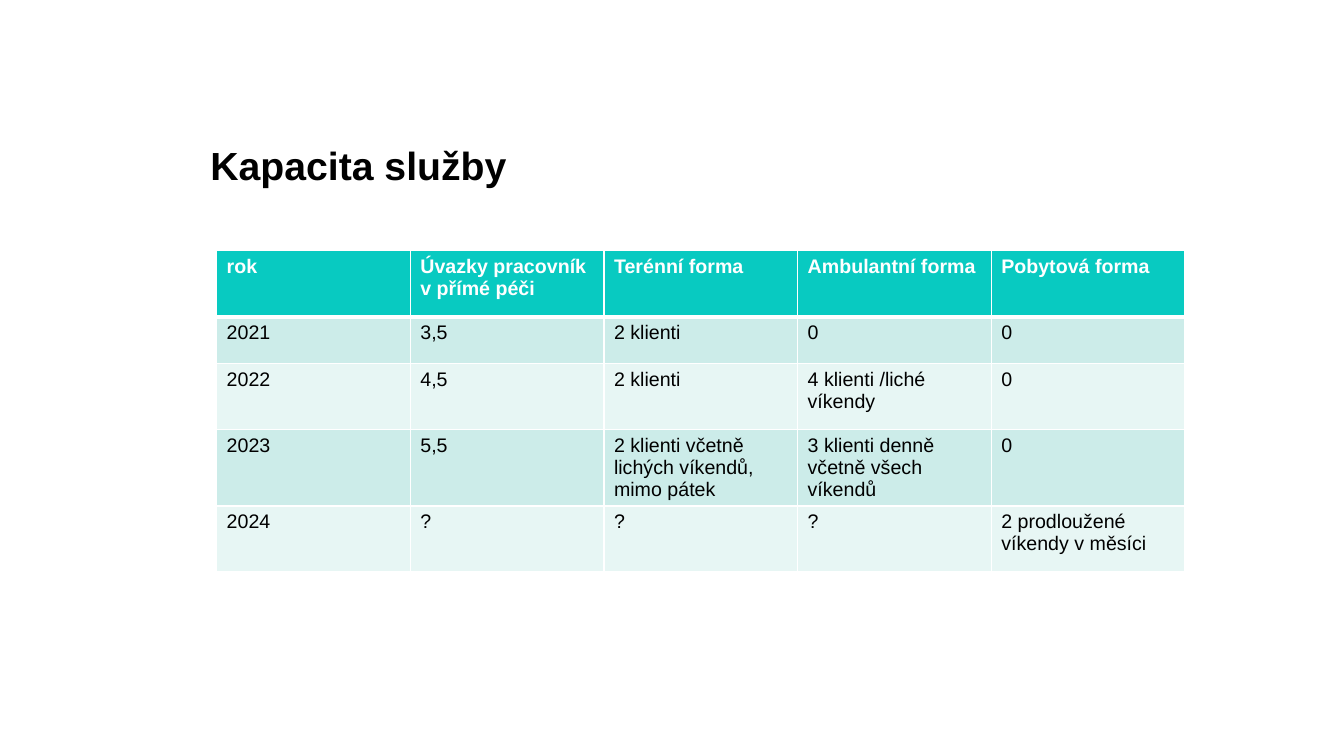
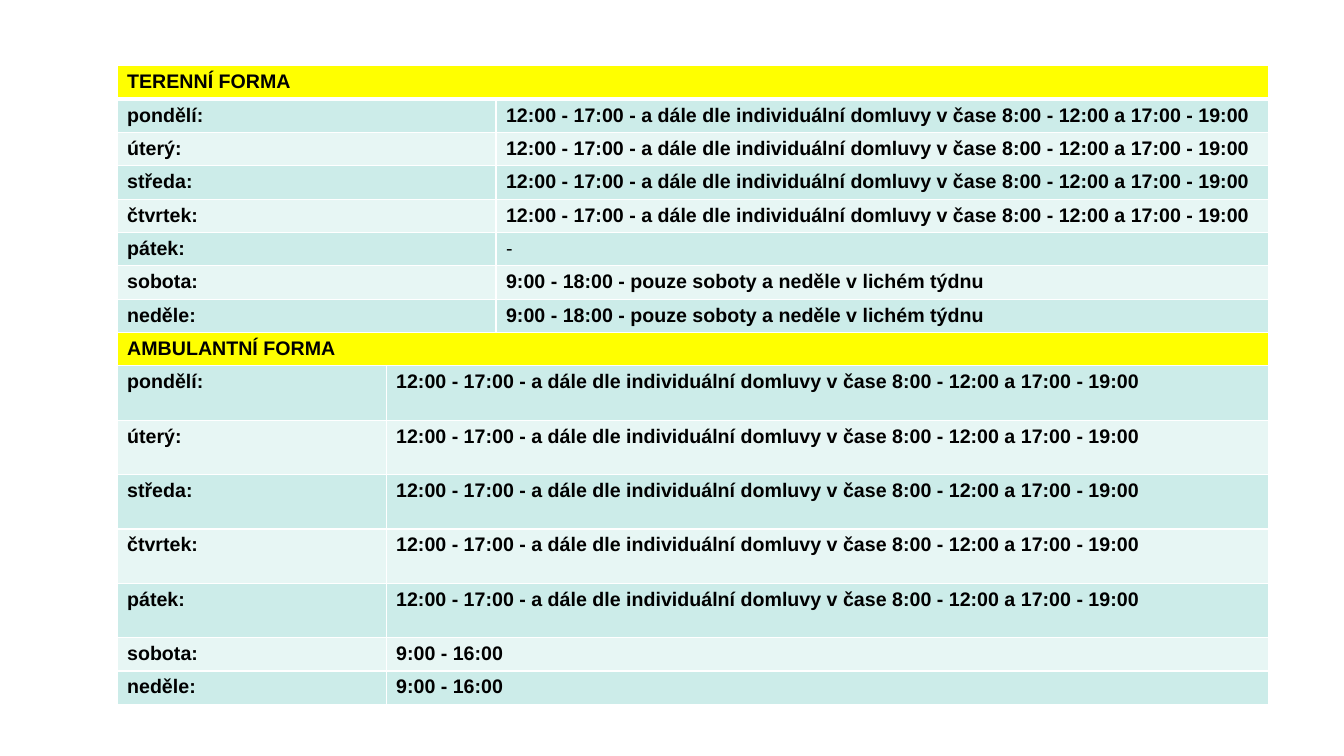
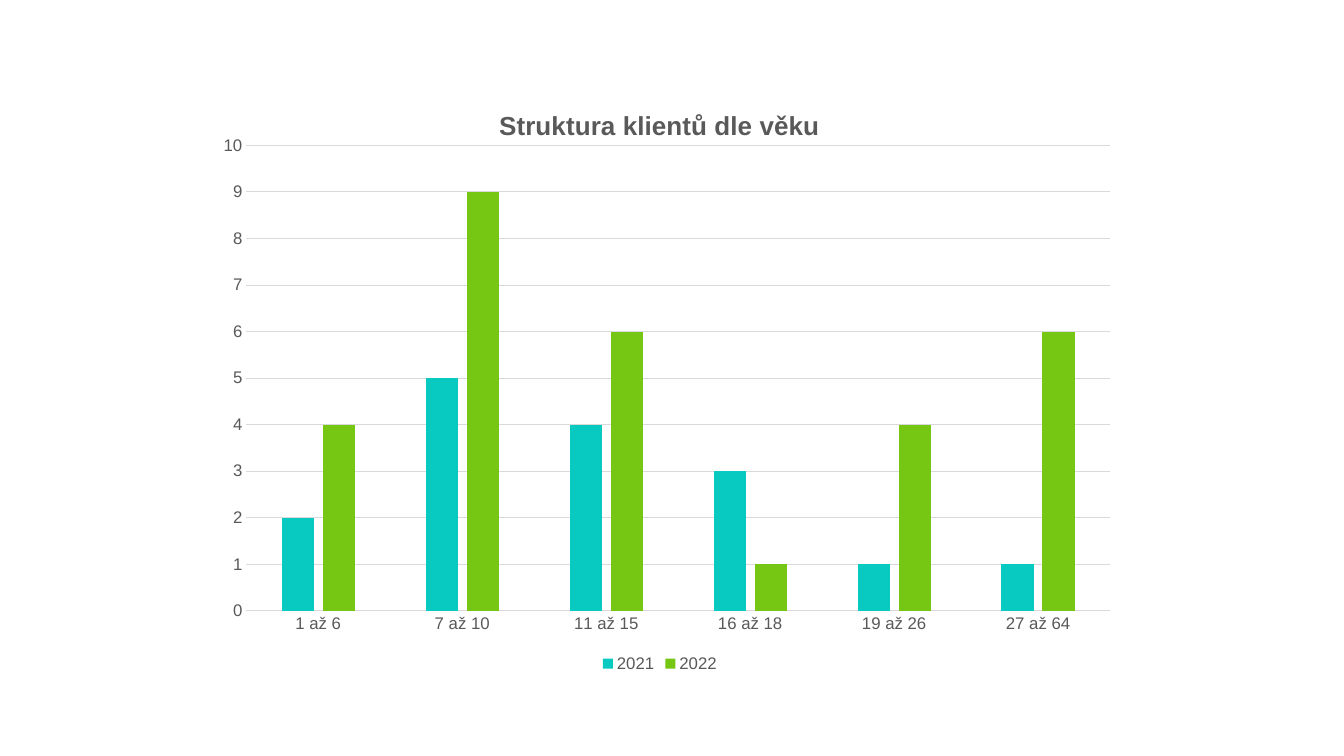
from lxml.etree import SubElement
from pptx import Presentation
from pptx.chart.data import CategoryChartData
from pptx.dml.color import RGBColor
from pptx.enum.chart import XL_CHART_TYPE, XL_LEGEND_POSITION, XL_TICK_MARK
from pptx.enum.text import MSO_ANCHOR, MSO_AUTO_SIZE, PP_ALIGN
from pptx.oxml import parse_xml
from pptx.oxml.ns import nsdecls, qn
from pptx.util import Cm, Pt

FONT = "Arial"
WHITE, BLACK, GREY, GRID = "FFFFFF", "000000", "595959", "D9D9D9"
TEAL, GREEN, YELLOW = "08CAC1", "76C714", "FFFF00"
BANDS = ["E7F6F4", "CCECE9"]


def set_font(font, color, **values):
    for name, value in {"name": FONT, **values}.items():
        setattr(font, name, value)
    font.color.rgb = RGBColor.from_string(color)


def set_layout(element, position, **values):
    layout = element.find(qn("c:layout"))
    if layout is None:
        layout = parse_xml(f"<c:layout {nsdecls('c')}/>")
        element.insert(position, layout)
    manual = SubElement(layout, qn("c:manualLayout"))
    for name, value in values.items():
        SubElement(manual, qn(f"c:{name}")).set("val", str(value))


deck = Presentation()
deck.slide_width, deck.slide_height = Cm(33.87), Cm(19.05)
title_layout, blank_layout = deck.slide_layouts[5], deck.slide_layouts[6]

capacity_slide = deck.slides.add_slide(title_layout)
title = capacity_slide.shapes.title
title.left, title.top, title.width, title.height = Cm(5.05), Cm(3.56), Cm(20.9), Cm(2.18)
frame = title.text_frame
frame.text = "Kapacita služby"
for name, value in {
    "word_wrap": True,
    "auto_size": MSO_AUTO_SIZE.NONE,
    "vertical_anchor": MSO_ANCHOR.TOP,
}.items():
    setattr(frame, name, value)
para = frame.paragraphs[0]
para.alignment, para.line_spacing = PP_ALIGN.JUSTIFY, 0.9
set_font(para.font, BLACK, size=Pt(28), bold=True)

hours_slide = deck.slides.add_slide(blank_layout)

capacity = [
    ["rok", "Úvazky pracovník v přímé péči", "Terénní forma", "Ambulantní forma", "Pobytová forma"],
    ["2021", "3,5", "2 klienti", "0", "0"],
    ["2022", "4,5", "2 klienti", "4 klienti /liché víkendy", "0"],
    ["2023", "5,5", "2 klienti včetně lichých víkendů, mimo pátek", "3 klienti denně včetně všech víkendů", "0"],
    ["2024", "?", "?", "?", "2 prodloužené víkendy v měsíci"],
]
days = ["pondělí:", "úterý:", "středa:", "čtvrtek:", "pátek:", "sobota:", "neděle:"]
weekday = "12:00 - 17:00 - a dále dle individuální domluvy v čase 8:00 - 12:00 a 17:00 - 19:00"
odd_weekend = "9:00 - 18:00 - pouze soboty a neděle v lichém týdnu"
field_hours = [weekday] * 4 + ["-"] + [odd_weekend] * 2
clinic_hours = [weekday] * 5 + ["9:00 - 16:00"] * 2
hours = [["TERENNÍ FORMA", None, None]]
hours += [[day, None, time] for day, time in zip(days, field_hours)]
hours += [["AMBULANTNÍ FORMA", None, None]]
hours += [[day, time, None] for day, time in zip(days, clinic_hours)]

tables = [
    {
        "slide": capacity_slide, "rows": capacity, "left": 5.46, "top": 6.32,
        "widths": [4.88] * 5, "heights": [1.66, 1.18, 1.66, 1.93, 1.66],
        "headings": [0], "heading_fill": TEAL, "heading_color": WHITE, "bold": False,
    },
    {
        "slide": hours_slide, "rows": hours, "left": 2.95, "top": 1.66,
        "widths": [6.78, 2.77, 19.48], "heights": [0.84] * 9 + [1.37] * 5 + [0.84] * 2,
        "headings": [0, 8], "heading_fill": YELLOW, "heading_color": BLACK, "bold": True,
    },
]

for item in tables:
    rows, widths, heights = item["rows"], item["widths"], item["heights"]
    table = item["slide"].shapes.add_table(
        len(rows), len(widths), Cm(item["left"]), Cm(item["top"]), Cm(sum(widths)), Cm(sum(heights))
    ).table
    for column, width in zip(table.columns, widths):
        column.width = Cm(width)
    for row, height in zip(table.rows, heights):
        row.height = Cm(height)
    for row_index, texts in enumerate(rows):
        heading = row_index in item["headings"]
        band = row_index - max(start for start in item["headings"] if start <= row_index)
        fill = item["heading_fill"] if heading else BANDS[band % 2]
        color = item["heading_color"] if heading else BLACK
        for column_index, text in enumerate(texts):
            cell = table.cell(row_index, column_index)
            properties = cell._tc.get_or_add_tcPr()
            for side in "LRTB":
                thick = (row_index, side) in [(0, "B"), (1, "T")]
                properties.append(parse_xml(
                    f'<a:ln{side} {nsdecls("a")} w="{Pt(3 if thick else 1)}"><a:solidFill>'
                    f'<a:srgbClr val="{WHITE}"/></a:solidFill></a:ln{side}>'
                ))
            cell.fill.solid()
            cell.fill.fore_color.rgb = RGBColor.from_string(fill)
            if text is None:
                continue
            last = column_index
            while last + 1 < len(texts) and texts[last + 1] is None:
                last += 1
            if last > column_index:
                cell.merge(table.cell(row_index, last))
            cell.text = text
            span = cell.text_frame.paragraphs[0].runs[0]
            set_font(span.font, color, size=Pt(14), bold=heading or item["bold"] and text != "-")

age_slide = deck.slides.add_slide(blank_layout)
data = CategoryChartData()
data.categories = ["1 až 6", "7 až 10", "11 až 15", "16 až 18", "19 až 26", "27 až 64"]
data.add_series("2021", [2, 5, 4, 3, 1, 1])
data.add_series("2022", [4, 9, 6, 1, 4, 6])
chart = age_slide.shapes.add_chart(
    XL_CHART_TYPE.COLUMN_CLUSTERED, Cm(5.05), Cm(2.01), Cm(23.16), Cm(15.04), data
).chart
set_font(chart.font, GREY, size=Pt(12))

chart.has_title = True
chart_title = chart.chart_title
chart_title.include_in_layout = False
chart_title.text_frame.text = "Struktura klientů dle věku"
set_font(chart_title.text_frame.paragraphs[0].runs[0].font, GREY, size=Pt(18.6), bold=True)
set_layout(chart_title._element, 1, xMode="edge", yMode="edge", x=0.32, y=0.04)

plot = chart.plots[0]
for name, value in {"gap_width": 219, "overlap": -27, "vary_by_categories": False}.items():
    setattr(plot, name, value)
for series, color in zip(plot.series, [TEAL, GREEN]):
    series.format.fill.solid()
    series.format.fill.fore_color.rgb = RGBColor.from_string(color)
set_layout(
    chart._chartSpace.chart.plotArea, 0,
    layoutTarget="inner", xMode="edge", yMode="edge", x=0.05, y=0.11, w=0.94, h=0.78,
)

value_axis, category_axis = chart.value_axis, chart.category_axis
for name, value in {
    "minimum_scale": 0, "maximum_scale": 10, "major_unit": 1, "has_major_gridlines": True,
}.items():
    setattr(value_axis, name, value)
value_axis.format.line.fill.background()
for line in [value_axis.major_gridlines.format.line, category_axis.format.line]:
    line.width = Pt(0.75)
    line.color.rgb = RGBColor.from_string(GRID)
for axis in [value_axis, category_axis]:
    axis.major_tick_mark = axis.minor_tick_mark = XL_TICK_MARK.NONE
    set_font(axis.tick_labels.font, GREY, size=Pt(12))

chart.has_legend = True
chart.legend.position = XL_LEGEND_POSITION.BOTTOM
chart.legend.include_in_layout = False
set_font(chart.legend.font, GREY, size=Pt(12))

deck.save("out.pptx")
